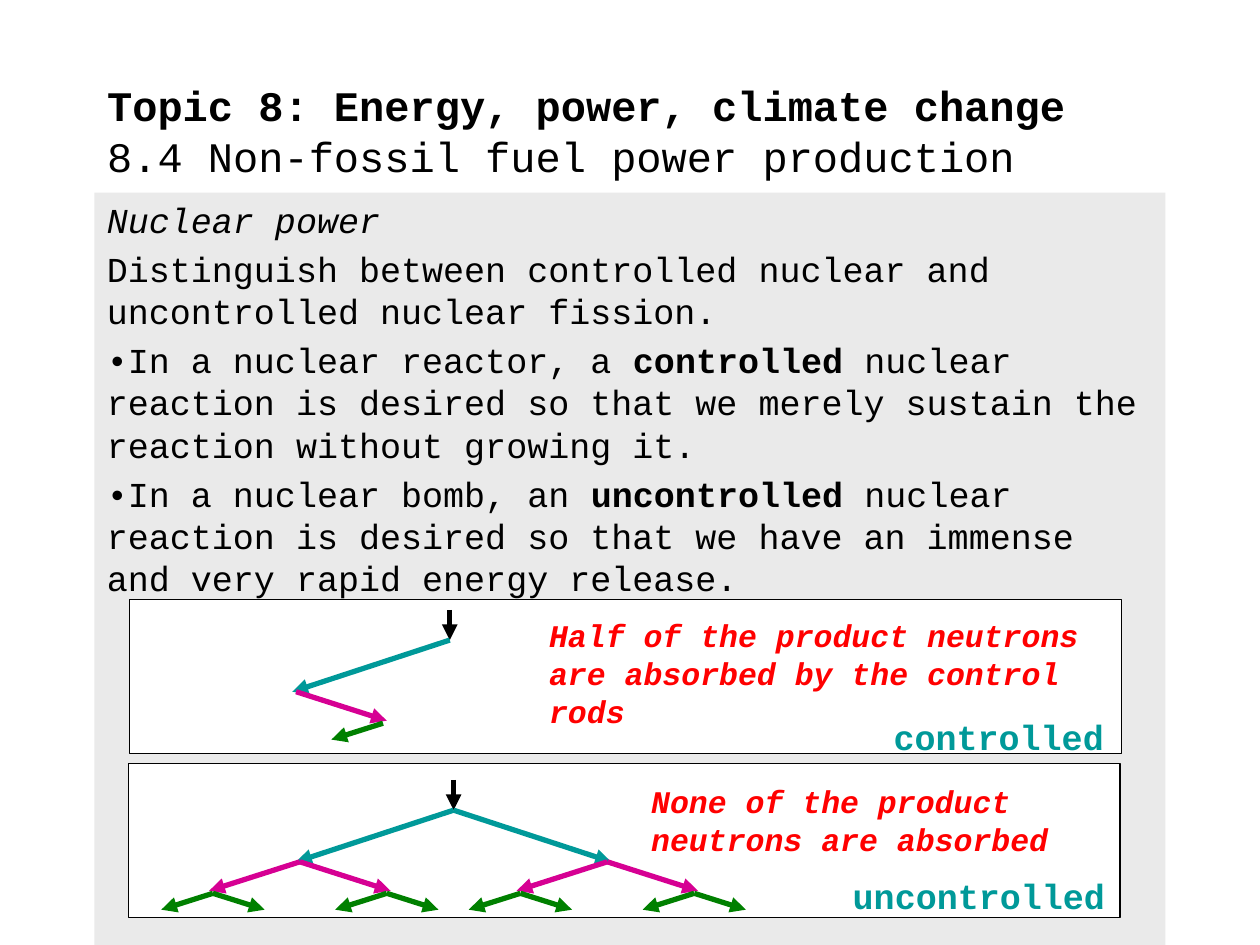
from lxml import etree
from pptx import Presentation
from pptx.dml.color import RGBColor
from pptx.enum import shapes, text
from pptx.oxml.ns import qn
from pptx.util import Inches, Pt

FONT = "Courier New"
COLORS = {"black": "000000", "white": "FFFFFF", "gray": "EAEAEA", "teal": "009999",
          "magenta": "D60093", "green": "008000", "red": "FF0000"}

# Each paragraph is a list of (text, style) runs; style holds "b" and/or "i".
TITLE = [[("Topic 8: Energy, power, climate change", "b"), ("\v", ""),
          ("8.4 Non-fossil fuel power production", "")]]
BODY = [
    [("Nuclear power", "i")],
    [("Distinguish between controlled nuclear and uncontrolled nuclear fission.", "")],
    [("•In a nuclear reactor, a ", ""), ("controlled", "b"),
     (" nuclear reaction is desired so that we merely sustain the reaction "
      "without growing it.", "")],
    [("•In a nuclear bomb, an ", ""), ("uncontrolled", "b"),
     (" nuclear reaction is desired so that we have an immense and very rapid "
      "energy release.", "")],
]
PANELS = [
    {"box": (1.03, 4.76, 7.87, 1.22),
     "label": "controlled", "label_box": (6.69, 5.63, 2.17, 0.43),
     "note": "Half of the product neutrons are absorbed by the control rods",
     "note_box": (4.26, 4.84, 4.67, 1),
     "start": (3.57, 5.08), "sides": [(-1,), (1,), (-1,)]},
    {"box": (1.02, 6.06, 7.87, 1.22),
     "label": "uncontrolled", "label_box": (6.48, 6.89, 2.39, 0.43),
     "note": "None of the product neutrons are absorbed",
     "note_box": (5.07, 6.16, 3.8, 0.7),
     "start": (3.6, 6.43), "sides": [(-1, 1)] * 3},
]
# Per generation: colour, arrow reach (dx, dy), offset to the next fission.
GENERATIONS = [("teal", (1.25, 0.41), (1.22, 0.41)),
               ("magenta", (0.72, 0.23), (0.69, 0.25)),
               ("green", (0.41, 0.13), (0, 0))]
NEUTRON_LENGTH = 0.24


def rgb(name):
    return RGBColor.from_string(COLORS[name])


def write(frame, paragraphs, size, color="black", align=text.PP_ALIGN.LEFT,
          anchor=text.MSO_ANCHOR.TOP, gap=0):
    frame.word_wrap = True
    frame.vertical_anchor = anchor
    for index, runs in enumerate(paragraphs):
        paragraph = frame.paragraphs[0] if index == 0 else frame.add_paragraph()
        paragraph.alignment = align
        paragraph.space_before = Pt(gap if index else 0)
        for words, style in runs:
            if words == "\v":
                paragraph.add_line_break()
                continue
            run = paragraph.add_run()
            run.text = words
            run.font.name = FONT
            run.font.size = Pt(size)
            run.font.bold = "b" in style
            run.font.italic = "i" in style
            run.font.color.rgb = rgb(color)


def add_rectangle(slide, box, fill, line=None):
    shape = slide.shapes.add_shape(shapes.MSO_SHAPE.RECTANGLE, *map(Inches, box))
    shape.shadow.inherit = False
    shape.fill.solid()
    shape.fill.fore_color.rgb = rgb(fill)
    if line:
        shape.line.color.rgb = rgb(line)
        shape.line.width = Pt(0.75)
    else:
        shape.line.fill.background()
    return shape


def add_text(slide, box, words, style, **formats):
    frame = slide.shapes.add_textbox(*map(Inches, box)).text_frame
    write(frame, [[(words, style)]], **formats)
    frame.auto_size = text.MSO_AUTO_SIZE.SHAPE_TO_FIT_TEXT


def add_arrow(slide, start, end, color):
    arrow = slide.shapes.add_connector(shapes.MSO_CONNECTOR.STRAIGHT,
                                       *map(Inches, start + end))
    arrow.line.color.rgb = rgb(color)
    arrow.line.width = Pt(3)
    etree.SubElement(arrow.line._get_or_add_ln(), qn("a:tailEnd"), type="triangle")
    etree.SubElement(arrow._element.spPr, qn("a:effectLst"))


def add_fissions(slide, start, sides):
    """Draw the incoming neutron and every generation of product neutrons."""
    x, y = start
    add_arrow(slide, (x, y - NEUTRON_LENGTH), start, "black")
    origins = [start]
    for (color, reach, offset), directions in zip(GENERATIONS, sides):
        following = []
        for x, y in origins:
            for side in directions:
                add_arrow(slide, (x, y), (x + side * reach[0], y + reach[1]), color)
                following.append((x + side * offset[0], y + offset[1]))
        origins = following


def main():
    presentation = Presentation()
    presentation.slide_width, presentation.slide_height = Inches(10), Inches(7.5)
    slide = presentation.slides.add_slide(presentation.slide_layouts[5])

    title = slide.shapes.title
    title.left, title.top, title.width, title.height = map(Inches, (0.75, 0.58, 8.5, 0.91))
    write(title.text_frame, TITLE, size=24, anchor=text.MSO_ANCHOR.MIDDLE)

    body = add_rectangle(slide, (0.75, 1.53, 8.5, 5.97), "gray")
    write(body.text_frame, BODY, size=20, gap=4)

    for panel in PANELS:
        add_rectangle(slide, panel["box"], "white", "black")
        add_text(slide, panel["label_box"], panel["label"], "b", size=20,
                 color="teal", align=text.PP_ALIGN.RIGHT)
        add_fissions(slide, panel["start"], panel["sides"])
        add_text(slide, panel["note_box"], panel["note"], "bi", size=18, color="red")

    presentation.save("out.pptx")


if __name__ == "__main__":
    main()
